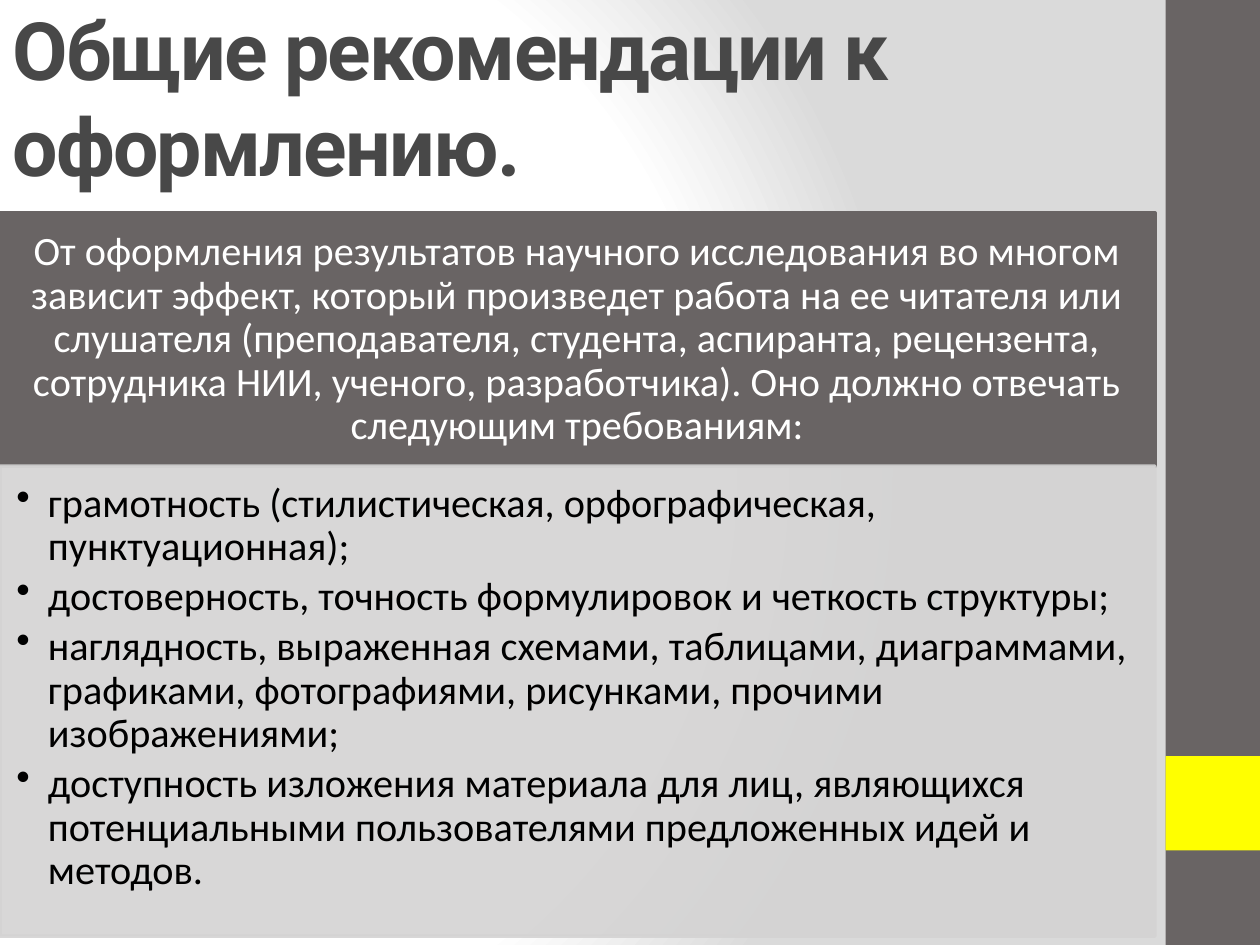
from lxml import etree
from pptx import Presentation
from pptx.dml.color import RGBColor
from pptx.enum.shapes import MSO_SHAPE
from pptx.enum.text import MSO_ANCHOR, PP_ALIGN
from pptx.oxml.ns import qn
from pptx.util import Pt

RECTANGLE = MSO_SHAPE.RECTANGLE
TOP, MIDDLE = MSO_ANCHOR.TOP, MSO_ANCHOR.MIDDLE
LEFT, CENTER = PP_ALIGN.LEFT, PP_ALIGN.CENTER

WHITE = RGBColor(0xFF, 0xFF, 0xFF)
BLACK = RGBColor(0x00, 0x00, 0x00)
YELLOW = RGBColor(0xFF, 0xFF, 0x00)
DARK_GRAY = RGBColor(0x69, 0x64, 0x64)
TITLE_GRAY = RGBColor(0x48, 0x48, 0x48)
PANEL_GRAY = RGBColor(0xD4, 0xD3, 0xD3)
SHADE_GRAY = RGBColor(0xDA, 0xDA, 0xDA)

SLIDE_W, SLIDE_H = 720, 540
SIDEBAR_W = 54
PANEL_W = 660

LEAD = (
    "От оформления результатов научного исследования во многом зависит эффект, "
    "который произведет работа на ее читателя или слушателя (преподавателя, "
    "студента, аспиранта, рецензента, сотрудника НИИ, ученого, разработчика). "
    "Оно должно отвечать следующим требованиям:"
)
REQUIREMENTS = [
    "грамотность (стилистическая, орфографическая, пунктуационная);",
    "достоверность, точность формулировок и четкость структуры;",
    "наглядность, выраженная схемами, таблицами, диаграммами, графиками, "
    "фотографиями, рисунками, прочими изображениями;",
    "доступность изложения материала для лиц, являющихся потенциальными "
    "пользователями предложенных идей и методов.",
]


class SlideBuilder:
    """Holds the slide and its text style."""

    body_font, body_size = "Calibri", 23
    title_font, title_size = "Roboto", 46

    def __init__(self, slide):
        self.slide = slide

    def background(self, stops, focus):
        fill = self.slide.background.fill
        fill.gradient()
        gradient = self.slide.element.find(".//" + qn("a:gradFill"))
        for child in list(gradient):
            gradient.remove(child)
        stop_list = etree.SubElement(gradient, qn("a:gsLst"))
        for percent, color in stops:
            stop = etree.SubElement(stop_list, qn("a:gs"), pos=str(percent * 1000))
            etree.SubElement(stop, qn("a:srgbClr"), val=str(color))
        circle = etree.SubElement(gradient, qn("a:path"), path="circle")
        sides = {side: str(percent * 1000) for side, percent in zip("ltrb", focus)}
        etree.SubElement(circle, qn("a:fillToRect"), **sides)

    def block(self, left, top, width, height, color, outlined=False, opacity=100):
        shape = self.slide.shapes.add_shape(
            RECTANGLE, Pt(left), Pt(top), Pt(width), Pt(height))
        shape.shadow.inherit = False
        shape.fill.solid()
        shape.fill.fore_color.rgb = color
        if outlined:
            shape.line.color.rgb = color
            shape.line.width = Pt(2)
        else:
            shape.line.fill.background()
        if opacity < 100:
            for rgb in shape.element.spPr.iter(qn("a:srgbClr")):
                etree.SubElement(rgb, qn("a:alpha"), val=str(opacity * 1000))
        return shape

    def title(self, left, top, width, height, text):
        box = self.slide.shapes.add_textbox(Pt(left), Pt(top), Pt(width), Pt(height))
        frame = box.text_frame
        frame.word_wrap = True
        frame.vertical_anchor = MIDDLE
        paragraph = frame.paragraphs[0]
        run = paragraph.add_run()
        run.text = text
        run.font.name = self.title_font
        run.font.size = Pt(self.title_size)
        run.font.bold = True
        run.font.color.rgb = TITLE_GRAY
        run.font._element.set("spc", "-100")

    def body(self, shape, texts, color, anchor, align, insets, bullets=False):
        frame = shape.text_frame
        frame.word_wrap = True
        frame.vertical_anchor = anchor
        (frame.margin_left, frame.margin_top,
         frame.margin_right, frame.margin_bottom) = map(Pt, insets)
        for i, text in enumerate(texts):
            paragraph = frame.add_paragraph() if i else frame.paragraphs[0]
            paragraph.text = text
            paragraph.alignment = align
            paragraph.line_spacing = 0.9
            paragraph.font.name = self.body_font
            paragraph.font.size = Pt(self.body_size)
            paragraph.font.color.rgb = color
            if bullets:
                paragraph.space_after = Pt(3.7)
                self.bullet(paragraph)

    def bullet(self, paragraph, indent=18):
        properties = paragraph._p.get_or_add_pPr()
        properties.set("marL", str(Pt(indent)))
        properties.set("indent", str(-Pt(indent)))
        mark = etree.Element(qn("a:buChar"), char="•")
        properties.find(qn("a:defRPr")).addprevious(mark)


def main():
    deck = Presentation()
    deck.slide_width, deck.slide_height = Pt(SLIDE_W), Pt(SLIDE_H)
    builder = SlideBuilder(deck.slides.add_slide(deck.slide_layouts[6]))

    # Background and sidebar
    builder.background([(0, WHITE), (75, WHITE), (100, SHADE_GRAY)], (20, 50, 100, 50))
    sidebar_left = SLIDE_W - SIDEBAR_W
    builder.block(sidebar_left, 0, SIDEBAR_W, SLIDE_H, DARK_GRAY)
    builder.block(sidebar_left, 432, SIDEBAR_W, SIDEBAR_W, YELLOW)

    # Title
    builder.title(0, 0, 695, 110, "Общие рекомендации к оформлению.")

    # Lead statement
    lead_top, lead_height = 121.7, 144.7
    lead = builder.block(0, lead_top, PANEL_W, lead_height, DARK_GRAY, outlined=True)
    builder.body(lead, [LEAD], WHITE, MIDDLE, CENTER, (13, 7.2, 13, 7.2))

    # Requirements
    requirements = builder.block(0, lead_top + lead_height, PANEL_W, 268.6,
                                 PANEL_GRAY, outlined=True, opacity=90)
    builder.body(requirements, REQUIREMENTS, BLACK, TOP, LEFT,
                 (9.4, 9.4, 13, 14.4), bullets=True)

    deck.save("out.pptx")


if __name__ == "__main__":
    main()
